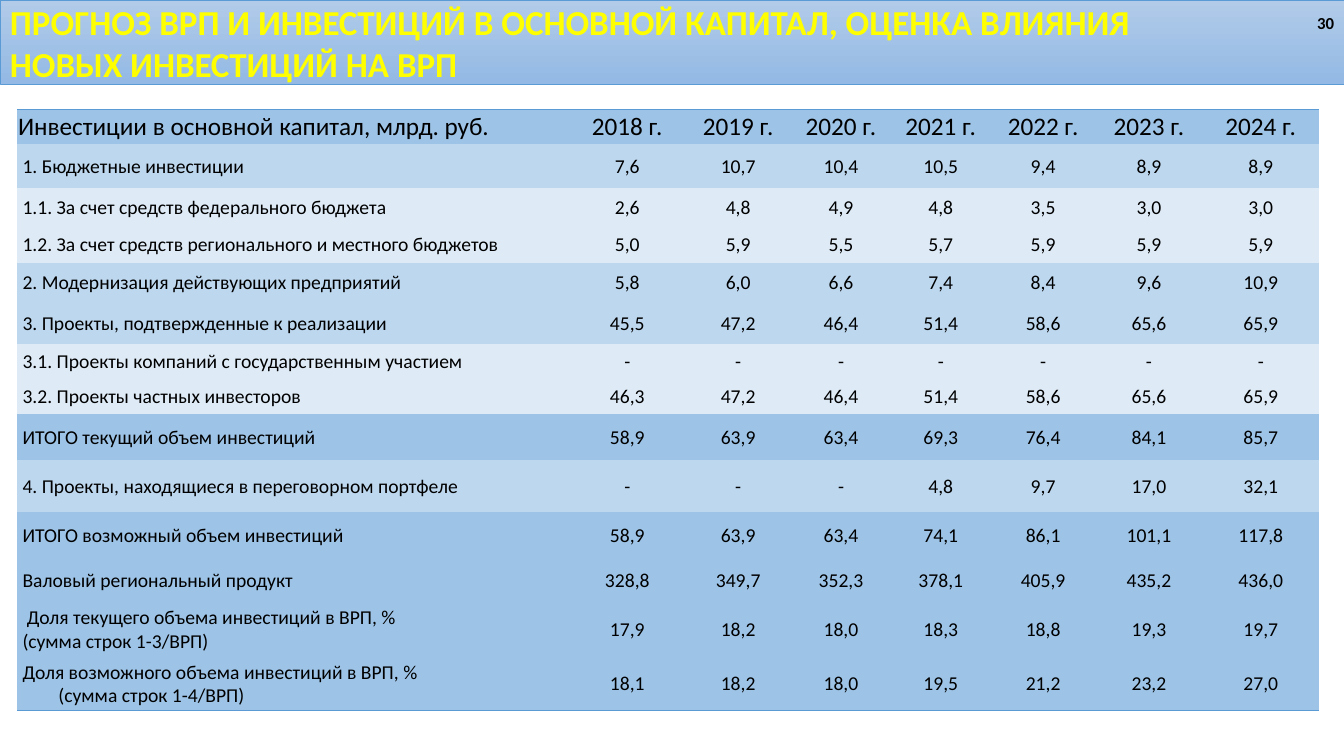
from lxml import etree
from pptx import Presentation
from pptx import util as u
from pptx.dml import color
from pptx.enum import shapes, text
from pptx.oxml import ns

Pt = u.Pt
DEEP, MID, PALE, EDGE = "9DC3E6", "BDD7EE", "DEEBF7", "5B9BD5"
LEFT, RIGHT, MIDDLE = text.PP_ALIGN.LEFT, text.PP_ALIGN.RIGHT, text.PP_ALIGN.CENTER
PLAIN = "{2D5ABB26-0587-4C30-8999-92F81FD0307C}"
COLS = [394.5, 82.8, 75.6, 71.3, 71.3, 74.9, 76.3, 83.5]
HEAD = ["Инвестиции в основной капитал, млрд. руб."]
HEAD += [f"{year} г." for year in range(2018, 2025)]

ROWS = [
    (31, MID, "1. Бюджетные инвестиции", "7,6 10,7 10,4 10,5 9,4 8,9 8,9"),
    (27.4, PALE, "1.1. За счет средств федерального бюджета",
     "2,6 4,8 4,9 4,8 3,5 3,0 3,0"),
    (26, PALE, "1.2. За счет средств регионального и местного бюджетов",
     "5,0 5,9 5,5 5,7 5,9 5,9 5,9"),
    (28.8, MID, "2. Модернизация действующих предприятий",
     "5,8 6,0 6,6 7,4 8,4 9,6 10,9"),
    (29, MID, "3. Проекты, подтвержденные к реализации",
     "45,5 47,2 46,4 51,4 58,6 65,6 65,9"),
    (25.2, PALE, "3.1. Проекты компаний с государственным участием",
     "- - - - - - -"),
    (25.2, PALE, "3.2. Проекты частных инвесторов",
     "46,3 47,2 46,4 51,4 58,6 65,6 65,9"),
    (33, DEEP, "ИТОГО текущий объем инвестиций",
     "58,9 63,9 63,4 69,3 76,4 84,1 85,7"),
    (37.3, MID, "4. Проекты, находящиеся в переговорном портфеле",
     "- - - 4,8 9,7 17,0 32,1"),
    (32.4, DEEP, "ИТОГО возможный объем инвестиций",
     "58,9 63,9 63,4 74,1 86,1 101,1 117,8"),
    (31.8, DEEP, "Валовый региональный продукт",
     "328,8 349,7 352,3 378,1 405,9 435,2 436,0"),
    (38.8, DEEP, "Доля текущего объема инвестиций в ВРП, %\n(сумма строк 1-3/ВРП)",
     "17,9 18,2 18,0 18,3 18,8 19,3 19,7"),
    (38.8, DEEP, "Доля возможного объема инвестиций в ВРП, %\n(сумма строк 1-4/ВРП)",
     "18,1 18,2 18,0 19,5 21,2 23,2 27,0"),
]
INDENTS = {12: (3.2, 0), 13: (0, 25.7)}


def rgb(code):
    return color.RGBColor.from_string(code)


def write(frame, words, size=14, tint="000000", bold=False, align=LEFT, indents=()):
    frame.word_wrap = True
    for i, line in enumerate(words.split("\n")):
        para = frame.paragraphs[0] if i == 0 else frame.add_paragraph()
        para.alignment = align
        if indents:
            para._p.get_or_add_pPr().set("marL", str(Pt(indents[i])))
        run = para.add_run()
        run.text = line
        font = run.font
        font.name, font.size, font.bold = "Calibri", Pt(size), bold
        font.color.rgb = rgb(tint)


def rule(cell, side):
    line = etree.Element(ns.qn(f"a:{side}"), w=str(Pt(1)))
    fill = etree.SubElement(line, ns.qn("a:solidFill"))
    etree.SubElement(fill, ns.qn("a:srgbClr"), val=EDGE)
    cell._tc.get_or_add_tcPr().insert(0, line)


def banner(slide, x, y, w, h):
    bar = slide.shapes.add_shape(
        shapes.MSO_SHAPE.RECTANGLE, Pt(x), Pt(y), Pt(w), Pt(h))
    bar.shadow.inherit = False
    bar.fill.gradient()
    bar.fill.gradient_angle = 270
    for stop, tint, spot in zip(bar.fill.gradient_stops, ("B1CBE9", "93B9E4"), (0, 1)):
        stop.color.rgb = rgb(tint)
        stop.position = spot
    bar.line.color.rgb = rgb(EDGE)
    bar.line.width = Pt(0.5)
    bar.text_frame.vertical_anchor = text.MSO_ANCHOR.MIDDLE
    write(bar.text_frame, "ПРОГНОЗ ВРП И ИНВЕСТИЦИЙ В ОСНОВНОЙ КАПИТАЛ, ОЦЕНКА ВЛИЯНИЯ\n"
          "НОВЫХ ИНВЕСТИЦИЙ НА ВРП", size=25, tint="FFFF00", bold=True)
    page = slide.shapes.add_textbox(Pt(x + w - 216), Pt(y + 1.5), Pt(216), Pt(29))
    page.text_frame.vertical_anchor = text.MSO_ANCHOR.MIDDLE
    write(page.text_frame, "30", size=12, bold=True, align=RIGHT)


def grid(slide, x, y, w, h):
    rows = [(25.2, DEEP, HEAD)]
    rows += [(tall, tint, [name, *nums.split()]) for tall, tint, name, nums in ROWS]
    table = slide.shapes.add_table(
        len(rows), len(COLS), Pt(x), Pt(y), Pt(w), Pt(h)).table
    table.first_row = table.horz_banding = False
    table._tbl.tblPr.find(ns.qn("a:tableStyleId")).text = PLAIN
    for col, wide in zip(table.columns, COLS):
        col.width = Pt(wide * w / sum(COLS))
    for r, (tall, tint, words) in enumerate(rows):
        table.rows[r].height = Pt(tall)
        for c, word in enumerate(words):
            cell = table.cell(r, c)
            cell.fill.solid()
            cell.fill.fore_color.rgb = rgb(tint)
            cell.vertical_anchor = text.MSO_ANCHOR.MIDDLE
            cell.margin_left = Pt(3.9 if r and c == 0 else 0.7)
            cell.margin_right = cell.margin_top = Pt(0.7)
            cell.margin_bottom = 0
            write(cell.text_frame, word, size=14 if r else 18,
                  align=MIDDLE if c else LEFT,
                  indents=INDENTS.get(r, ()) if c == 0 else ())
            if r == 0:
                rule(cell, "lnT")
            if r == len(rows) - 1:
                rule(cell, "lnB")


def main():
    deck = Presentation()
    deck.slide_width, deck.slide_height = Pt(960), Pt(540)
    slide = deck.slides.add_slide(deck.slide_layouts[6])
    grid(slide, 12.2, 78, 930.2, 429.9)
    banner(slide, 0, 0, 960, 60)
    deck.save("out.pptx")


if __name__ == "__main__":
    main()
